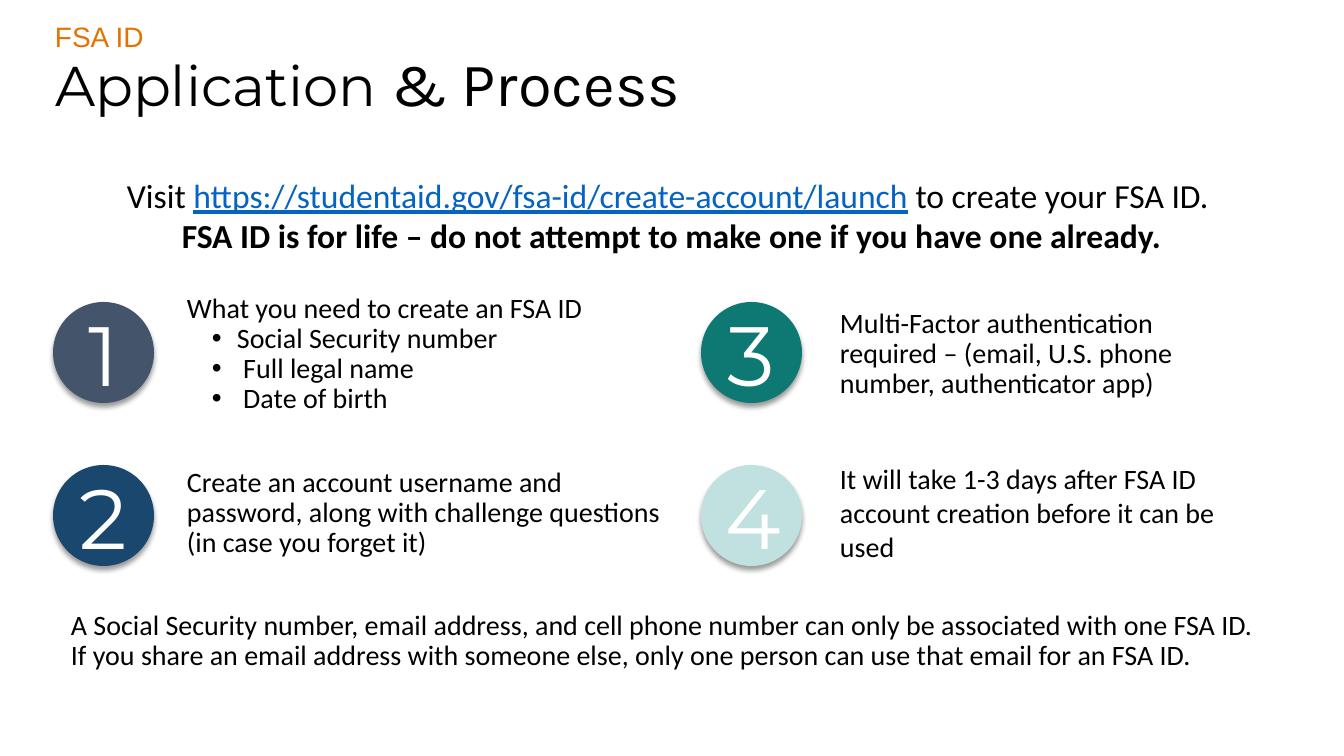
from lxml.etree import SubElement
from pptx import Presentation
from pptx.dml.color import RGBColor
from pptx.enum.shapes import MSO_SHAPE
from pptx.enum.text import MSO_ANCHOR, MSO_AUTO_SIZE, PP_ALIGN
from pptx.oxml.ns import qn
from pptx.util import Emu, Pt

COLORS = {
    "black": "000000", "white": "FFFFFF", "orange": "E57200", "link": "0563C1",
    "slate": "44546A", "navy": "1A476E", "teal": "0E7973", "mint": "C0E1DF",
}

FORMATS = {
    "kicker": {"name": "Arial", "size": Pt(20), "color": "orange"},
    "title": {"name": "Montserrat", "size": Pt(40), "color": "black"},
    "title end": {"name": "Karla", "size": Pt(44), "color": "black"},
    "number": {"name": "Montserrat", "size": Pt(60), "color": "white"},
    "body": {"name": "Calibri", "size": Pt(20), "color": "black"},
    "intro": {"name": "Calibri", "size": Pt(24), "color": "black"},
    "intro link": {"name": "Calibri", "size": Pt(24), "color": "link", "underline": True},
    "intro bold": {"name": "Calibri", "size": Pt(24), "color": "black", "bold": True},
}

KICKER = [[("FSA ID", "kicker")]]
TITLE = [[("Application ", "title"), ("& Process", "title end")]]
INTRO = [
    [
        ("Visit ", "intro"),
        ("https://studentaid.gov/fsa-id/create-account/launch", "intro link"),
        (" to create your FSA ID. ", "intro"),
    ],
    [("FSA ID is for life – do not attempt to make one if you have one already.", "intro bold")],
]
FOOTER = [[(
    "A Social Security number, email address, and cell phone number can only be "
    "associated with one FSA ID. If you share an email address with someone else, "
    "only one person can use that email for an FSA ID.", "body",
)]]
STEPS = [
    {"color": "slate", "top": 289, "height": 132, "spacing": 0.9,
     "text": "What you need to create an FSA ID",
     "bullets": ["Social Security number", " Full legal name", " Date of birth"]},
    {"color": "navy", "top": 463, "height": 102, "spacing": 0.9, "bullets": [],
     "text": "Create an account username and password, along with challenge questions "
             "(in case you forget it)"},
    {"color": "teal", "top": 304, "height": 102, "spacing": 0.9, "bullets": [],
     "text": "Multi-Factor authentication required – (email, U.S. phone number, "
             "authenticator app)"},
    {"color": "mint", "top": 457, "height": 112, "spacing": 1.0, "bullets": [],
     "text": "It will take 1-3 days after FSA ID account creation before it can be used"},
]
COLUMNS = [{"circle": 53, "text": 177, "width": 495}, {"circle": 701, "text": 830, "width": 403}]
ROW_TOP, ROW_STEP, CIRCLE_SIZE = 302, 163, 101


def px(length):
    return Emu(round(length * 914400 / 100.8))


def add_bullet(para):
    properties = para._p.get_or_add_pPr()
    properties.set("marL", str(px(50)))
    properties.set("indent", str(px(-25)))
    SubElement(properties, qn("a:buFont"), typeface="Arial")
    SubElement(properties, qn("a:buChar"), char="•")


def write(shape, paragraphs, align=PP_ALIGN.LEFT, spacing=1.0, bulleted_from=None):
    frame = shape.text_frame
    for index, spans in enumerate(paragraphs):
        para = frame.add_paragraph() if index else frame.paragraphs[0]
        if bulleted_from is not None and index >= bulleted_from:
            add_bullet(para)
        para.alignment = align
        para.line_spacing = spacing
        for text, style in spans:
            span = para.add_run()
            span.text = text
            for key, value in FORMATS[style].items():
                if key == "color":
                    span.font.color.rgb = RGBColor.from_string(COLORS[value])
                else:
                    setattr(span.font, key, value)


def fit_text(shape):
    frame = shape.text_frame
    frame.word_wrap = True
    frame.auto_size = MSO_AUTO_SIZE.SHAPE_TO_FIT_TEXT
    frame.vertical_anchor = MSO_ANCHOR.TOP


def add_text(page, bounds, paragraphs, **options):
    box = page.shapes.add_textbox(*map(px, bounds))
    fit_text(box)
    write(box, paragraphs, **options)


def add_circle(page, left, top, color, number):
    circle = page.shapes.add_shape(
        MSO_SHAPE.OVAL, px(left), px(top), px(CIRCLE_SIZE), px(CIRCLE_SIZE))
    circle.fill.solid()
    circle.fill.fore_color.rgb = RGBColor.from_string(COLORS[color])
    circle.line.fill.background()
    circle.shadow.inherit = False
    effects = circle._element.spPr.find(qn("a:effectLst"))
    shadow = SubElement(effects, qn("a:outerShdw"), blurRad=str(Pt(4)), dist=str(Pt(3)),
                        dir="5400000", algn="t", rotWithShape="0")
    tint = SubElement(shadow, qn("a:srgbClr"), val=COLORS["black"])
    SubElement(tint, qn("a:alpha"), val="40000")
    circle.text_frame.vertical_anchor = MSO_ANCHOR.MIDDLE
    write(circle, [[(str(number), "number")]], align=PP_ALIGN.CENTER)


def main():
    deck = Presentation()
    deck.slide_width, deck.slide_height = px(1344), px(756)
    page = deck.slides.add_slide(deck.slide_layouts[5])

    title = page.shapes.title
    title.left, title.top, title.width, title.height = map(px, (45, 40, 794, 85))
    fit_text(title)
    write(title, TITLE)

    add_text(page, (45, 15, 662, 44), KICKER)
    add_text(page, (45, 170, 1253, 92), INTRO, align=PP_ALIGN.CENTER)

    for index, step in enumerate(STEPS):
        column, row = divmod(index, 2)
        place = COLUMNS[column]
        add_circle(page, place["circle"], ROW_TOP + row * ROW_STEP, step["color"], index + 1)
        paragraphs = [[(text, "body")] for text in [step["text"], *step["bullets"]]]
        add_text(page, (place["text"], step["top"], place["width"], step["height"]),
                 paragraphs, spacing=step["spacing"], bulleted_from=1)

    add_text(page, (61, 606, 1220, 72), FOOTER, spacing=0.9)
    deck.save("out.pptx")


if __name__ == "__main__":
    main()
